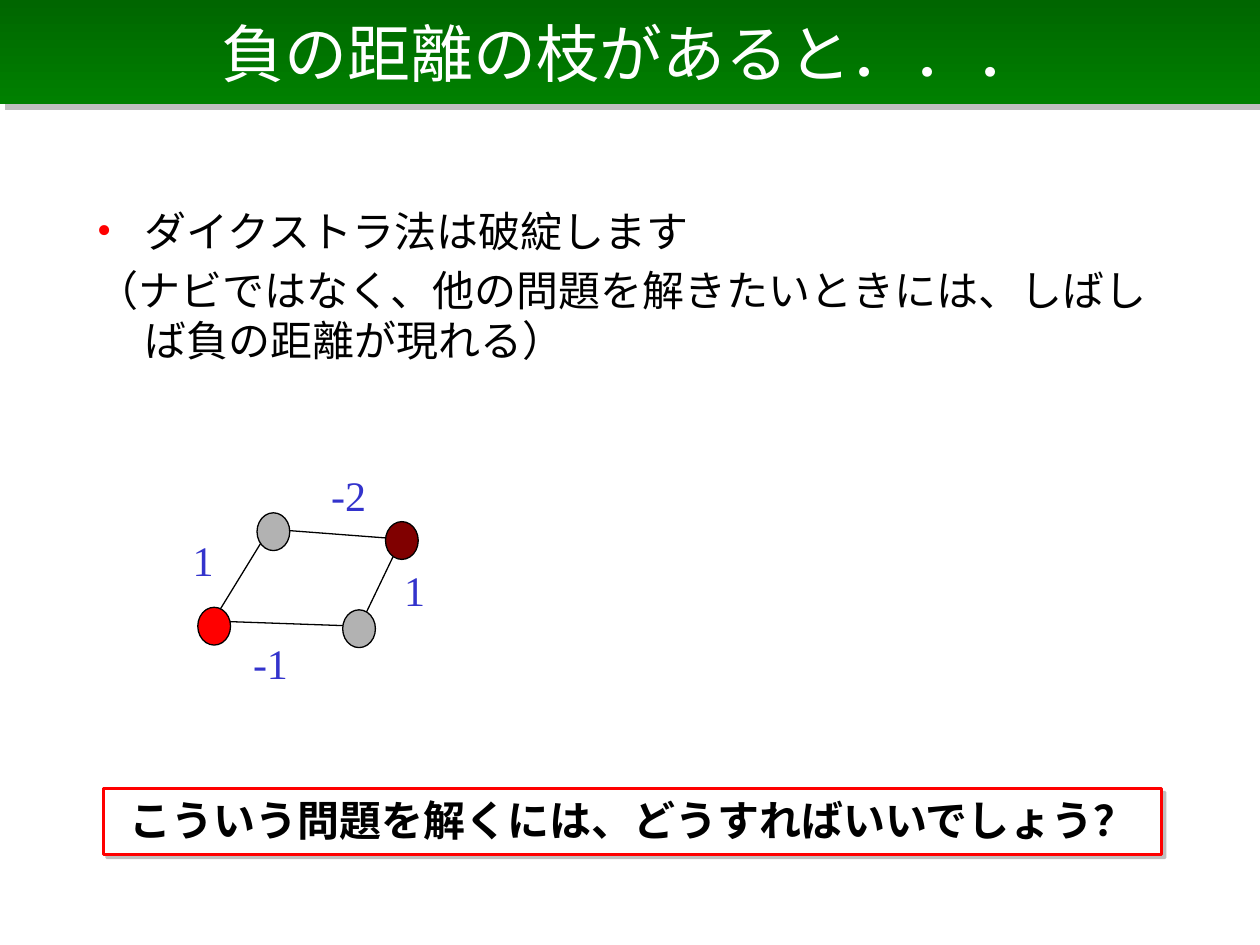
from dataclasses import dataclass

from lxml import etree
from pptx import Presentation
from pptx.dml.color import RGBColor
from pptx.enum.shapes import MSO_CONNECTOR, MSO_SHAPE
from pptx.enum.text import MSO_ANCHOR, PP_ALIGN
from pptx.oxml.ns import qn
from pptx.util import Inches, Pt

RECTANGLE, OVAL = MSO_SHAPE.RECTANGLE, MSO_SHAPE.OVAL
STRAIGHT = MSO_CONNECTOR.STRAIGHT
LEFT, CENTER = PP_ALIGN.LEFT, PP_ALIGN.CENTER
TOP, MIDDLE = MSO_ANCHOR.TOP, MSO_ANCHOR.MIDDLE


@dataclass(frozen=True)
class Theme:
    font: str = "Times New Roman"
    title_size: float = 36
    body_size: float = 24
    paragraph_gap: float = 5
    thin_line: float = 0.75
    frame_line: float = 1.5
    hanging: float = 0.38
    white: str = "FFFFFF"
    black: str = "000000"
    red: str = "FF0000"
    gray: str = "B2B2B2"
    dark_red: str = "800000"
    weight: str = "3333CC"
    shadow: str = "808080"
    banner_top: str = "006600"
    banner_bottom: str = "008000"


THEME = Theme()


@dataclass(frozen=True)
class Node:
    left: float
    top: float
    color: str


@dataclass(frozen=True)
class Edge:
    """A line between two nodes, with its weight label."""
    start: tuple[float, float]
    end: tuple[float, float]
    weight: str
    label_at: tuple[float, float]


NODE_SIZE = (0.26, 0.3)
LABEL_SIZE = (0.48, 0.5)
NODES = [
    Node(1.57, 4.82, THEME.red),
    Node(2.72, 4.84, THEME.gray),
    Node(3.06, 4.14, THEME.dark_red),
    Node(2.04, 4.07, THEME.gray),
]
EDGES = [
    Edge((1.72, 4.93), (2.85, 4.97), "-1", (1.91, 5.01)),
    Edge((2.85, 4.98), (3.21, 4.23), "1", (3.11, 4.43)),
    Edge((3.2, 4.28), (2.15, 4.2), "-2", (2.53, 3.68)),
    Edge((2.15, 4.18), (1.69, 4.93), "1", (1.43, 4.19)),
]
BODY_LINES = [
    "ダイクストラ法は破綻します",
    "（ナビではなく、他の問題を解きたいときには、しばしば負の距離が現れる）",
]


def rgb(color: str) -> RGBColor:
    return RGBColor.from_string(color)


def write(shape, *lines: str, size=THEME.body_size, color=THEME.black,
          bold=False, align=LEFT, anchor=TOP, gap=0.0):
    """Fill a shape with one paragraph per line and return the paragraphs."""
    frame = shape.text_frame
    frame.word_wrap = True
    frame.vertical_anchor = anchor
    frame.text = "\n".join(lines)
    for paragraph in frame.paragraphs:
        paragraph.alignment = align
        paragraph.space_before = Pt(gap)
        font = paragraph.runs[0].font
        font.name, font.size, font.bold = THEME.font, Pt(size), bold
        font.color.rgb = rgb(color)
    return frame.paragraphs


def add_text(slide, left: float, top: float, width: float, height: float,
             *lines: str, **text_format):
    box = slide.shapes.add_textbox(*map(Inches, (left, top, width, height)))
    return write(box, *lines, **text_format)


def add_shape(slide, kind, left: float, top: float, width: float, height: float,
              fill: str, line: str | None = None, line_width=THEME.thin_line):
    shape = slide.shapes.add_shape(kind, *map(Inches, (left, top, width, height)))
    shape.shadow.inherit = False
    shape.fill.solid()
    shape.fill.fore_color.rgb = rgb(fill)
    if line:
        shape.line.color.rgb = rgb(line)
        shape.line.width = Pt(line_width)
    else:
        shape.line.fill.background()
    return shape


def add_shadow(shape, distance: float) -> None:
    """Cast a sharp, half-transparent shadow to the lower right."""
    effects = shape.element.spPr.find(qn("a:effectLst"))
    outer = etree.SubElement(effects, qn("a:outerShdw"), blurRad="0",
                             dist=str(Pt(distance)), dir="2700000",
                             algn="ctr", rotWithShape="0")
    color = etree.SubElement(outer, qn("a:srgbClr"), val=THEME.shadow)
    etree.SubElement(color, qn("a:alpha"), val="50000")


def add_banner(slide) -> None:
    banner = add_shape(slide, RECTANGLE, 0, 0, 10, 0.83, THEME.banner_top)
    banner.fill.gradient()
    banner.fill.gradient_angle = 270
    for stop, color in zip(banner.fill.gradient_stops,
                           (THEME.banner_top, THEME.banner_bottom)):
        stop.color.rgb = rgb(color)
    add_shadow(banner, 4.2)
    write(banner, "負の距離の枝があると．．．", size=THEME.title_size,
          color=THEME.white, align=CENTER, anchor=MIDDLE)


def add_body(slide) -> None:
    paragraphs = add_text(slide, 0.67, 1.58, 8.58, 1.99, *BODY_LINES,
                          gap=THEME.paragraph_gap)
    for paragraph in paragraphs:
        properties = paragraph._p.get_or_add_pPr()
        properties.set("marL", str(Inches(THEME.hanging)))
        properties.set("indent", str(-Inches(THEME.hanging)))
    bulleted = paragraphs[0]._p.get_or_add_pPr()
    bullet_color = etree.SubElement(bulleted, qn("a:buClr"))
    etree.SubElement(bullet_color, qn("a:srgbClr"), val=THEME.red)
    etree.SubElement(bulleted, qn("a:buFont"), typeface=THEME.font)
    etree.SubElement(bulleted, qn("a:buChar"), char="•")


def add_edge(slide, edge: Edge) -> None:
    line = slide.shapes.add_connector(STRAIGHT, *map(Inches, edge.start + edge.end))
    line.line.color.rgb = rgb(THEME.black)
    line.line.width = Pt(THEME.thin_line)
    etree.SubElement(line.element.spPr, qn("a:effectLst"))


def add_graph(slide) -> None:
    for edge in EDGES:
        add_edge(slide, edge)
    for node in NODES:
        add_shape(slide, OVAL, node.left, node.top, *NODE_SIZE, node.color, THEME.black)
    for edge in EDGES:
        add_text(slide, *edge.label_at, *LABEL_SIZE, edge.weight, color=THEME.weight)


def add_question(slide) -> None:
    question = add_shape(slide, RECTANGLE, 0.82, 6.26, 8.4, 0.52, THEME.white,
                         THEME.red, THEME.frame_line)
    add_shadow(question, 2.8)
    write(question, "こういう問題を解くには、どうすればいいでしょう？",
          bold=True, align=CENTER)


def main() -> None:
    presentation = Presentation()
    presentation.slide_width, presentation.slide_height = Inches(10), Inches(7.5)
    slide = presentation.slides.add_slide(presentation.slide_layouts[6])
    add_banner(slide)
    add_body(slide)
    add_graph(slide)
    add_question(slide)
    presentation.save("out.pptx")


if __name__ == "__main__":
    main()
